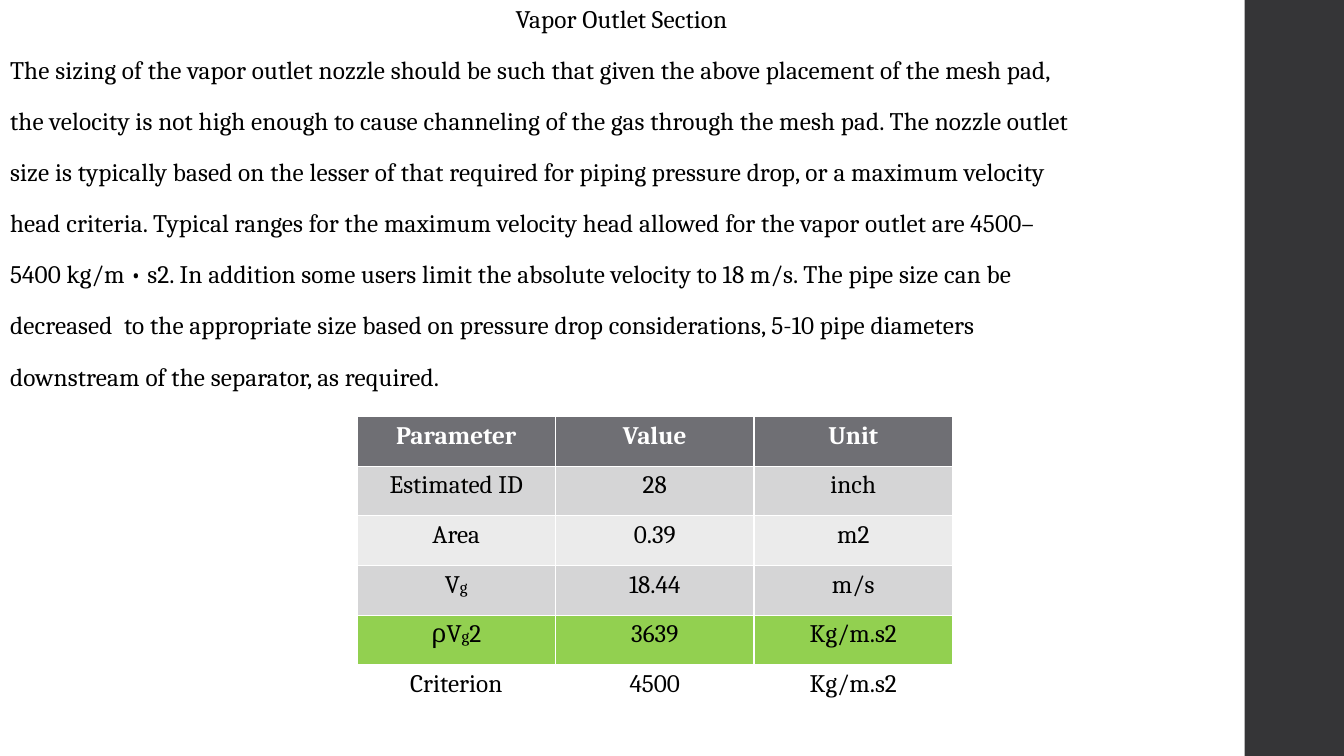
import lxml.etree
import pptx
import pptx.dml.color
import pptx.enum.shapes
import pptx.enum.text
import pptx.oxml.ns
import pptx.util

Pt = pptx.util.Pt
ALIGN = pptx.enum.text.PP_ALIGN
FONT = "Cambria"
COLORS = {
    "text": "000000",
    "sidebar": "353537",
    "header": "6F6F74",
    "header text": "FFFFFF",
    "dark band": "D5D5D6",
    "light band": "EBEBEB",
    "highlight": "92D050",
    "plain": "FFFFFF",
}
TITLE = "Vapor Outlet Section"
BODY_LINES = [
    "The sizing of the vapor outlet nozzle should be such that given the above placement of the mesh pad,",
    "the velocity is not high enough to cause channeling of the gas through the mesh pad. The nozzle outlet",
    "size is typically based on the lesser of that required for piping pressure drop, or a maximum velocity",
    "head criteria. Typical ranges for the maximum velocity head allowed for the vapor outlet are 4500–",
    "5400 kg/m • s2. In addition some users limit the absolute velocity to 18 m/s. The pipe size can be",
    "decreased  to the appropriate size based on pressure drop considerations, 5-10 pipe diameters",
    "downstream of the separator, as required.",
]
# Each row: fill, then its cells; a tuple holds text before, in and after a small index.
TABLE_ROWS = [
    ("header", ["Parameter", "Value", "Unit"]),
    ("dark band", ["Estimated ID", "28", "inch"]),
    ("light band", ["Area", "0.39", "m2"]),
    ("dark band", [("V", "g", ""), "18.44", "m/s"]),
    ("highlight", [("ρV", "g", "2"), "3639", "Kg/m.s2"]),
    ("plain", ["Criterion", "4500", "Kg/m.s2"]),
]


def rgb(name):
    return pptx.dml.color.RGBColor.from_string(COLORS[name])


def format_font(font, color, bold=False):
    font.name = FONT
    font.size = Pt(18)
    font.bold = bold
    font.color.rgb = rgb(color)


def fill_placeholder(shape, box, lines, alignment):
    """Move a placeholder to the box and fill it with unbulleted lines."""
    shape.left, shape.top, shape.width, shape.height = (Pt(v) for v in box)
    frame = shape.text_frame
    frame.word_wrap = True
    frame.auto_size = pptx.enum.text.MSO_AUTO_SIZE.NONE
    frame.vertical_anchor = pptx.enum.text.MSO_ANCHOR.TOP
    frame.text = "\n".join(lines)
    for paragraph in frame.paragraphs:
        paragraph.alignment = alignment
        paragraph.line_spacing = 0.95
        paragraph.space_before = Pt(14)
        paragraph.space_after = Pt(2)
        format_font(paragraph.font, "text")
        properties = paragraph._p.pPr
        properties.set("marL", "0")
        properties.set("indent", "0")
        defaults = properties.find(pptx.oxml.ns.qn("a:defRPr"))
        defaults.set("spc", "10")
        defaults.addprevious(lxml.etree.Element(pptx.oxml.ns.qn("a:buNone")))


def add_sidebar(slide, box):
    sidebar = slide.shapes.add_shape(
        pptx.enum.shapes.MSO_SHAPE.RECTANGLE, *(Pt(v) for v in box))
    sidebar.shadow.inherit = False
    sidebar.fill.solid()
    sidebar.fill.fore_color.rgb = rgb("sidebar")
    sidebar.line.fill.background()


def fill_cell(cell, content, fill):
    cell.fill.solid()
    cell.fill.fore_color.rgb = rgb(fill)
    paragraph = cell.text_frame.paragraphs[0]
    paragraph.alignment = ALIGN.CENTER
    is_header = fill == "header"
    format_font(paragraph.font, "header text" if is_header else "text", is_header)
    parts = (content,) if isinstance(content, str) else content
    for position, text in enumerate(parts):
        if text:
            run = paragraph.add_run()
            run.text = text
            if position == 1:
                run.font.size = Pt(12)


def add_sizing_table(slide, box):
    left, top, width, height = box
    columns = len(TABLE_ROWS[0][1])
    table = slide.shapes.add_table(
        len(TABLE_ROWS), columns, Pt(left), Pt(top), Pt(width), Pt(height)).table
    for column in table.columns:
        column.width = Pt(width / columns)
    for row, (fill, contents) in zip(table.rows, TABLE_ROWS):
        row.height = Pt(height / len(TABLE_ROWS))
        for cell, content in zip(row.cells, contents):
            fill_cell(cell, content, fill)


def build_slide(presentation):
    slide = presentation.slides.add_slide(presentation.slide_layouts[1])
    title, body = slide.placeholders
    text_width, title_height = 888, 36.5
    add_sidebar(slide, (889, 0, 72, 540))
    fill_placeholder(title, (0, 0, text_width, title_height), [TITLE], ALIGN.CENTER)
    fill_placeholder(body, (0, title_height, text_width, 540 - title_height),
                     BODY_LINES, ALIGN.LEFT)
    add_sizing_table(slide, (255, 297.5, 425.4, 213))


def main():
    presentation = pptx.Presentation()
    presentation.slide_width = Pt(960)
    presentation.slide_height = Pt(540)
    build_slide(presentation)
    presentation.save("out.pptx")


if __name__ == "__main__":
    main()
